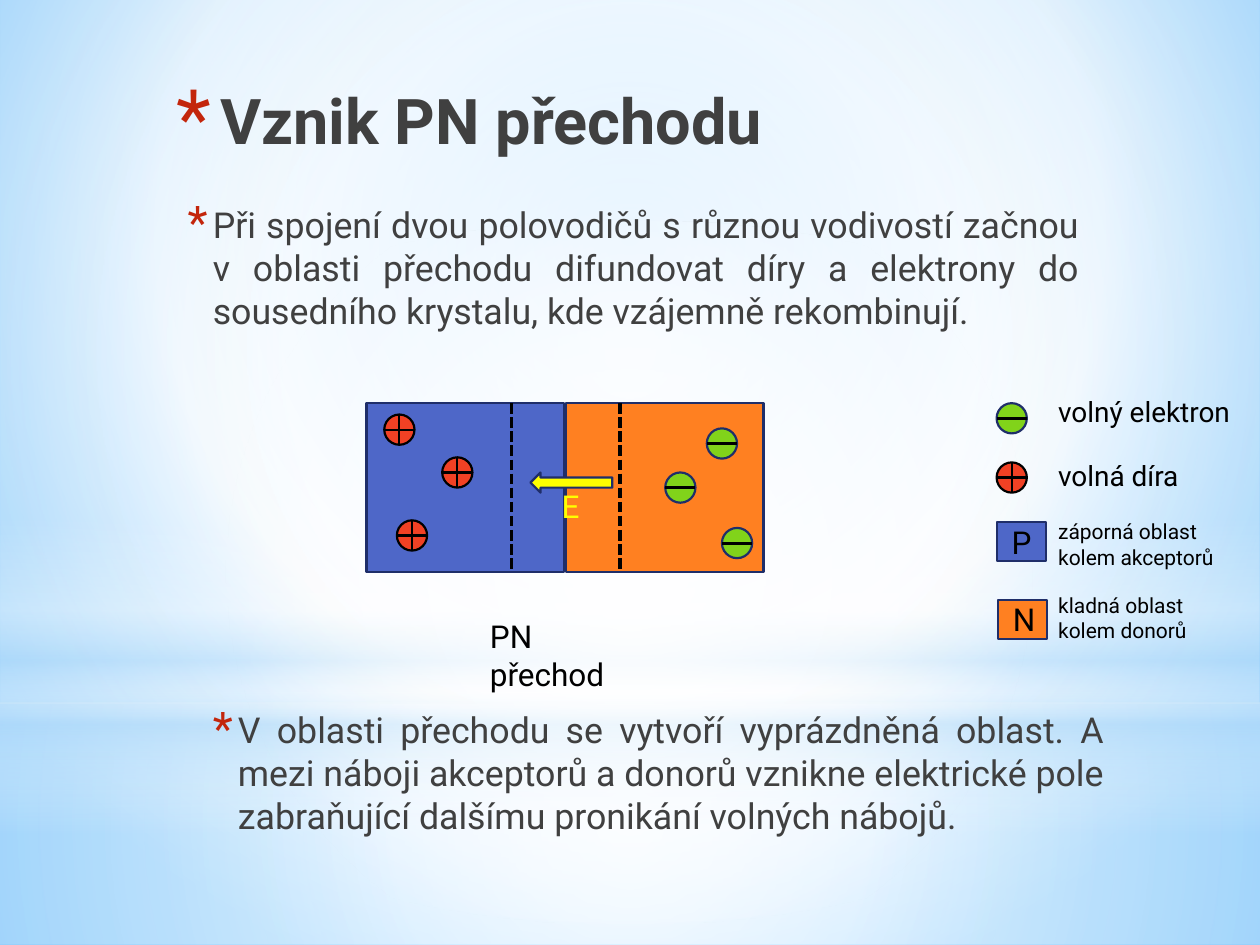
import pptx
import pptx.dml.color
import pptx.enum.dml
import pptx.enum.shapes
import pptx.enum.text
import pptx.oxml
import pptx.oxml.ns
import pptx.util
from lxml import etree

Inches, Pt = pptx.util.Inches, pptx.util.Pt
RGB = pptx.dml.color.RGBColor.from_string
SHAPE = pptx.enum.shapes.MSO_SHAPE
ALIGN = pptx.enum.text.PP_ALIGN
qn = pptx.oxml.ns.qn
NS = pptx.oxml.ns.nsdecls("a")

COLORS = {
    "p": "4E67C8", "n": "FF8021", "hole": "F14124", "electron": "81D31A",
    "outline": "1F2E69", "black": "000000", "yellow": "FFFF00",
    "text": "404040", "bullet": "C3260C",
    "white": "FFFFFF", "pale": "B4DCFA", "sky": "9ED5FF", "blue": "5BB9FF",
}
D = 0.24  # diameter of a charge

prs = pptx.Presentation()
prs.slide_width, prs.slide_height = Inches(10), Inches(7.5)
s = prs.slides.add_slide(prs.slide_layouts[6])


def add_shape(kind, at, fill, line=None):
    sp = s.shapes.add_shape(kind, *map(Inches, at))
    sp.shadow.inherit = False
    sp.fill.solid()
    sp.fill.fore_color.rgb = RGB(COLORS[fill])
    if line:
        sp.line.color.rgb = RGB(COLORS[line])
        sp.line.width = Pt(1.25)
    else:
        sp.line.fill.background()
    return sp


def add_text(text, at, size, color="black", wrap=True):
    tf = s.shapes.add_textbox(*map(Inches, at)).text_frame
    tf.word_wrap = wrap
    p = tf.paragraphs[0]
    p.text = text
    p.font.name = "Roboto"
    p.font.size = Pt(size)
    p.font.color.rgb = RGB(COLORS[color])
    return p


# Background glow: (shape, place, stops as position/colour/opacity, shading)
CENTER = '<a:path path="circle"><a:fillToRect l="50000" t="50000" r="50000" b="50000"/></a:path>'
UPPER = '<a:path path="circle"><a:fillToRect l="20000" t="10000" r="20000" b="60000"/></a:path>'
DOWN = '<a:lin ang="5400000" scaled="0"/>'
glows = [
    (None, None, [(0, "sky", 100), (60, "white", 100), (100, "blue", 100)], UPPER),
    (SHAPE.RECTANGLE, (0, 5.58, 10, 1.92),
     [(0, "white", 91), (37, "white", 76), (100, "pale", 79)], CENTER),
    (SHAPE.RECTANGLE, (0, 0, 10, 5.58),
     [(0, "white", 89), (48, "white", 62), (100, "pale", 79)], CENTER),
    (SHAPE.RECTANGLE, (0, 4.12, 10, 2.5),
     [(0, "white", 0), (29, "white", 30), (45, "pale", 40),
      (55, "white", 26), (65, "pale", 60), (100, "white", 0)], DOWN),
    (SHAPE.OVAL, (0, 1.75, 10, 5.58), [(0, "white", 100), (56, "white", 0)], CENTER),
]
for kind, at, stops, shading in glows:
    if kind is None:
        s.background.fill.solid()
        parent = s.element.find(".//" + qn("p:bgPr"))
    else:
        parent = add_shape(kind, at, "white").element.spPr
    gs = "".join(
        f'<a:gs pos="{pos * 1000}"><a:srgbClr val="{COLORS[color]}">'
        f'<a:alpha val="{alpha * 1000}"/></a:srgbClr></a:gs>'
        for pos, color, alpha in stops)
    grad = pptx.oxml.parse_xml(
        f'<a:gradFill {NS} rotWithShape="1"><a:gsLst>{gs}</a:gsLst>{shading}</a:gradFill>')
    parent.replace(parent.find(qn("a:solidFill")), grad)

# The two crystals and the legend swatches
add_shape(SHAPE.RECTANGLE, (2.91, 3.2, 1.57, 1.34), "p", "outline")
add_shape(SHAPE.RECTANGLE, (4.49, 3.2, 1.57, 1.34), "n", "outline")
add_shape(SHAPE.FLOWCHART_PROCESS, (7.91, 4.14, 0.39, 0.31), "p", "outline")
add_shape(SHAPE.FLOWCHART_PROCESS, (7.92, 4.76, 0.39, 0.31), "n", "outline")

# Free charges; the last of each kind belongs to the legend
for x, y in [(3.15, 4.13), (3.51, 3.63), (3.05, 3.29), (7.91, 3.67)]:
    add_shape(SHAPE.FLOWCHART_OR, (x, y, D, D), "hole", "black")

lines = [((x, 3.2, x, 4.54), 2, True) for x in (4.92, 4.06)]  # depletion edges
for x, y in [(5.73, 4.19), (5.61, 3.4), (5.28, 3.75), (7.91, 3.2)]:
    add_shape(SHAPE.OVAL, (x, y, D, D), "electron", "outline")
    lines.append(((x, y + D / 2, x + D, y + D / 2), 1.75, False))

for ends, width, dashed in lines:
    cx = s.shapes.add_connector(
        pptx.enum.shapes.MSO_CONNECTOR.STRAIGHT, *map(Inches, ends))
    cx.line.color.rgb = RGB(COLORS["black"])
    cx.line.width = Pt(width)
    if dashed:
        cx.line.dash_style = pptx.enum.dml.MSO_LINE.SQUARE_DOT
    etree.SubElement(cx.element.spPr, qn("a:effectLst"))

# Field arrow
arrow = add_shape(SHAPE.RIGHT_ARROW, (4.21, 3.75, 0.65, 0.16), "yellow", "outline")
arrow.rotation = 180
add_text("E", (4.36, 3.82, 0.34, 0.4), 18, "yellow", wrap=False)

# Labels
add_text("PN přechod", (3.79, 4.85, 1.42, 0.7), 18)
add_text("P", (7.93, 4.1, 0.34, 0.4), 18, wrap=False)
add_text("N", (7.94, 4.71, 0.36, 0.4), 18, wrap=False)
for text, top, height, size in [
    ("volný elektron", 3.08, 0.37, 16),
    ("volná díra", 3.59, 0.37, 16),
    ("záporná oblast kolem akceptorů", 4.07, 0.5, 12),
    ("kladná oblast kolem donorů", 4.65, 0.5, 12),
]:
    add_text(text, (8.3, top, 1.66, height), size)

# Title and body, each with a red asterisk
title = add_text("Vznik PN přechodu", (1.3, 0.6, 7.12, 1.25), 36, "text")
title.font.bold = True
bulleted = [(title, 0.35, 0.35, 128)]
for text, left, top in [
    ("Při spojení dvou polovodičů s různou vodivostí začnou v oblasti přechodu "
     "difundovat díry a elektrony do sousedního krystalu, kde vzájemně rekombinují.",
     1.34, 1.56),
    ("V oblasti přechodu se vytvoří vyprázdněná oblast. A mezi náboji akceptorů a "
     "donorů vznikne elektrické pole zabraňující dalšímu pronikání volných nábojů.",
     1.54, 5.57),
]:
    p = add_text(text, (left, top, 7.32, 1.1), 20.4, "text")
    p.alignment = ALIGN.JUSTIFY
    p.space_after = Pt(3)
    bulleted.append((p, 0.25, 0.2, 130))

for p, margin, hanging, percent in bulleted:
    pPr = p._p.get_or_add_pPr()
    pPr.set("marL", str(Inches(margin)))
    pPr.set("indent", str(-Inches(hanging)))
    bullet = [
        f'<a:buClr {NS}><a:srgbClr val="{COLORS["bullet"]}"/></a:buClr>',
        f'<a:buSzPct {NS} val="{percent * 1000}"/>',
        f'<a:buFont {NS} typeface="Roboto"/>',
        f'<a:buChar {NS} char="*"/>',
    ]
    at = pPr.index(pPr.find(qn("a:defRPr")))
    for i, xml in enumerate(bullet):
        pPr.insert(at + i, pptx.oxml.parse_xml(xml))

prs.save("out.pptx")
